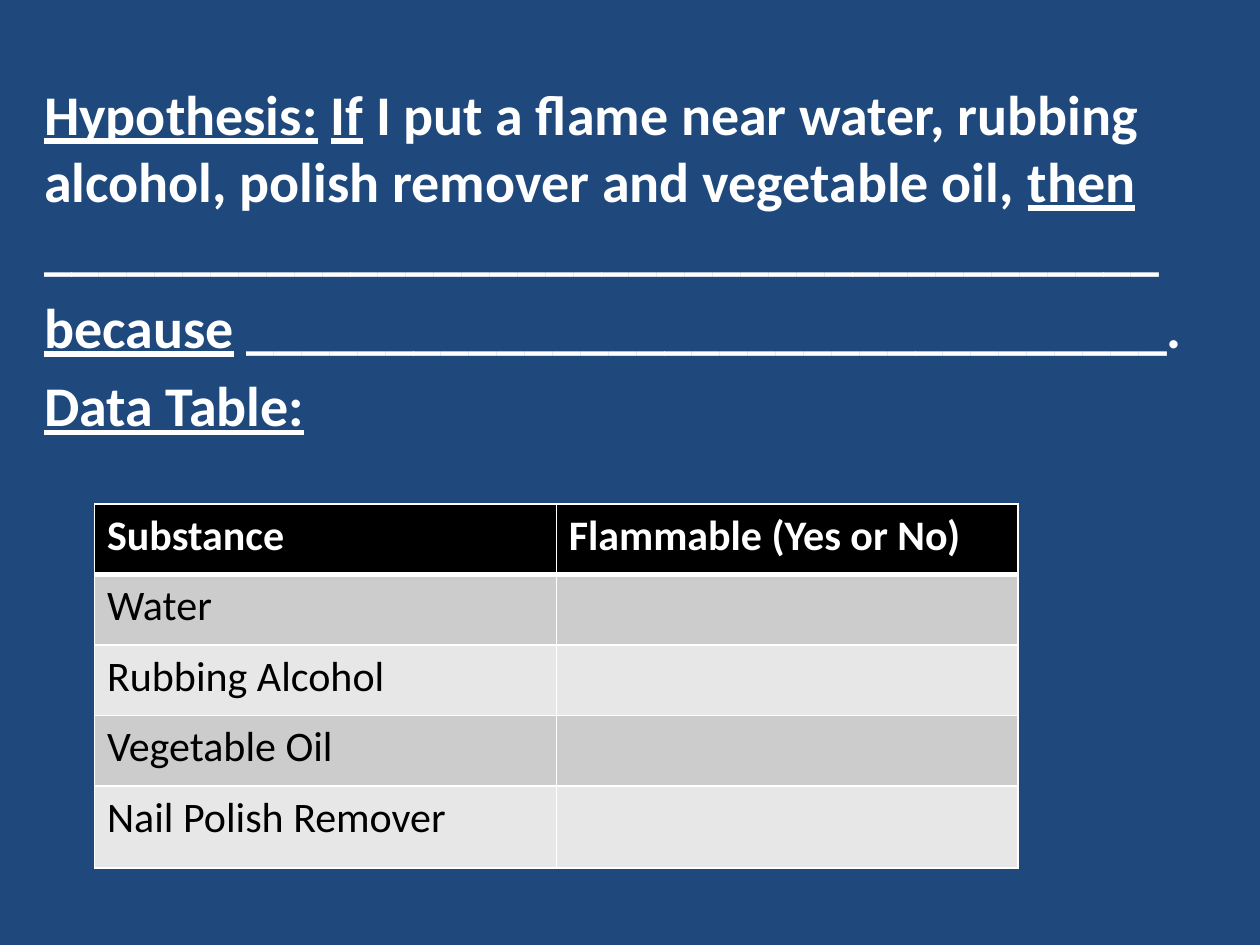
from dataclasses import dataclass

from lxml import etree
from pptx import Presentation
from pptx.dml.color import RGBColor
from pptx.enum import text
from pptx.oxml import ns
from pptx.util import Inches, Pt


@dataclass(frozen=True)
class Theme:
    font: str = "Calibri"
    back: str = "1F497D"
    light: str = "FFFFFF"
    dark: str = "000000"
    bands: tuple[str, str] = ("CCCCCC", "E7E7E7")
    large: int = 32
    small: int = 24


@dataclass(frozen=True)
class Part:
    words: str
    under: bool = False


@dataclass(frozen=True)
class Row:
    cells: tuple[str, str]
    fill: str
    ink: str
    bold: bool = False
    high: float = 0.56
    base: int = 1


THEME = Theme()
LINES = (
    (
        Part("Hypothesis:", True),
        Part(" "),
        Part("If", True),
        Part(" I put a flame near water, rubbing alcohol, polish remover and vegetable oil, "),
        Part("then", True),
        Part(" " + "_" * 40),
    ),
    (Part("because", True), Part(" " + "_" * 33 + ".")),
    (Part("Data Table:", True),),
)
ITEMS = ("Water", "Rubbing Alcohol", "Vegetable Oil", "Nail Polish Remover")


def write(para, words: str, *, size: int, ink: str, bold: bool = False, under: bool = False) -> None:
    """Add a formatted run to a paragraph."""
    run = para.add_run()
    run.text = words
    font = run.font
    font.name, font.size = THEME.font, Pt(size)
    font.bold, font.underline = bold, under
    font.color.rgb = RGBColor.from_string(ink)


def edge(cell, side: str, width: int) -> None:
    """Draw one border of a table cell."""
    line = etree.SubElement(cell._tc.get_or_add_tcPr(), ns.qn(f"a:ln{side}"), w=str(Pt(width)))
    fill = etree.SubElement(line, ns.qn("a:solidFill"))
    etree.SubElement(fill, ns.qn("a:srgbClr"), val=THEME.light)


def body(slide) -> None:
    """Fill the body placeholder with the hypothesis."""
    box = slide.placeholders[1]
    box.left, box.top, box.width, box.height = map(Inches, (0.25, 0.58, 9.42, 6.12))
    frame = box.text_frame
    frame.word_wrap = True
    frame.auto_size = text.MSO_AUTO_SIZE.NONE
    for i, parts in enumerate(LINES):
        para = frame.add_paragraph() if i else frame.paragraphs[0]
        para.space_before = Pt(THEME.large * 0.2)
        props = para._p.get_or_add_pPr()
        props.set("marL", "0")
        props.set("indent", "0")
        etree.SubElement(props, ns.qn("a:buNone"))
        for part in parts:
            write(para, part.words, size=THEME.large, ink=THEME.light, bold=True, under=part.under)


def grid(slide, rows: list[Row]) -> None:
    """Draw the data table."""
    high = sum(row.high for row in rows)
    area = map(Inches, (0.75, 4, 7.33, high))
    table = slide.shapes.add_table(len(rows), 2, *area).table
    for i, row in enumerate(rows):
        table.rows[i].height = Inches(row.high)
        top = rows[i - 1].base if i else 1
        for cell, words in zip(table.rows[i].cells, row.cells):
            for side, width in zip("LRTB", (1, 1, top, row.base)):
                edge(cell, side, width)
            cell.fill.solid()
            cell.fill.fore_color.rgb = RGBColor.from_string(row.fill)
            para = cell.text_frame.paragraphs[0]
            if words:
                write(para, words, size=THEME.small, ink=row.ink, bold=row.bold)
            else:
                para.font.size = Pt(THEME.small)


def main() -> None:
    """Build the slide and save it."""
    deck = Presentation()
    deck.slide_width, deck.slide_height = Inches(10), Inches(7.5)
    slide = deck.slides.add_slide(deck.slide_layouts[1])
    title = slide.shapes.title.element
    title.getparent().remove(title)
    back = slide.background.fill
    back.solid()
    back.fore_color.rgb = RGBColor.from_string(THEME.back)
    body(slide)
    head = Row(("Substance", "Flammable (Yes or No)"), THEME.dark, THEME.light, bold=True, base=3)
    rows = [
        Row((item, ""), THEME.bands[i % 2], THEME.dark, high=0.65 if item == ITEMS[-1] else 0.56)
        for i, item in enumerate(ITEMS)
    ]
    grid(slide, [head, *rows])
    deck.save("out.pptx")


if __name__ == "__main__":
    main()
